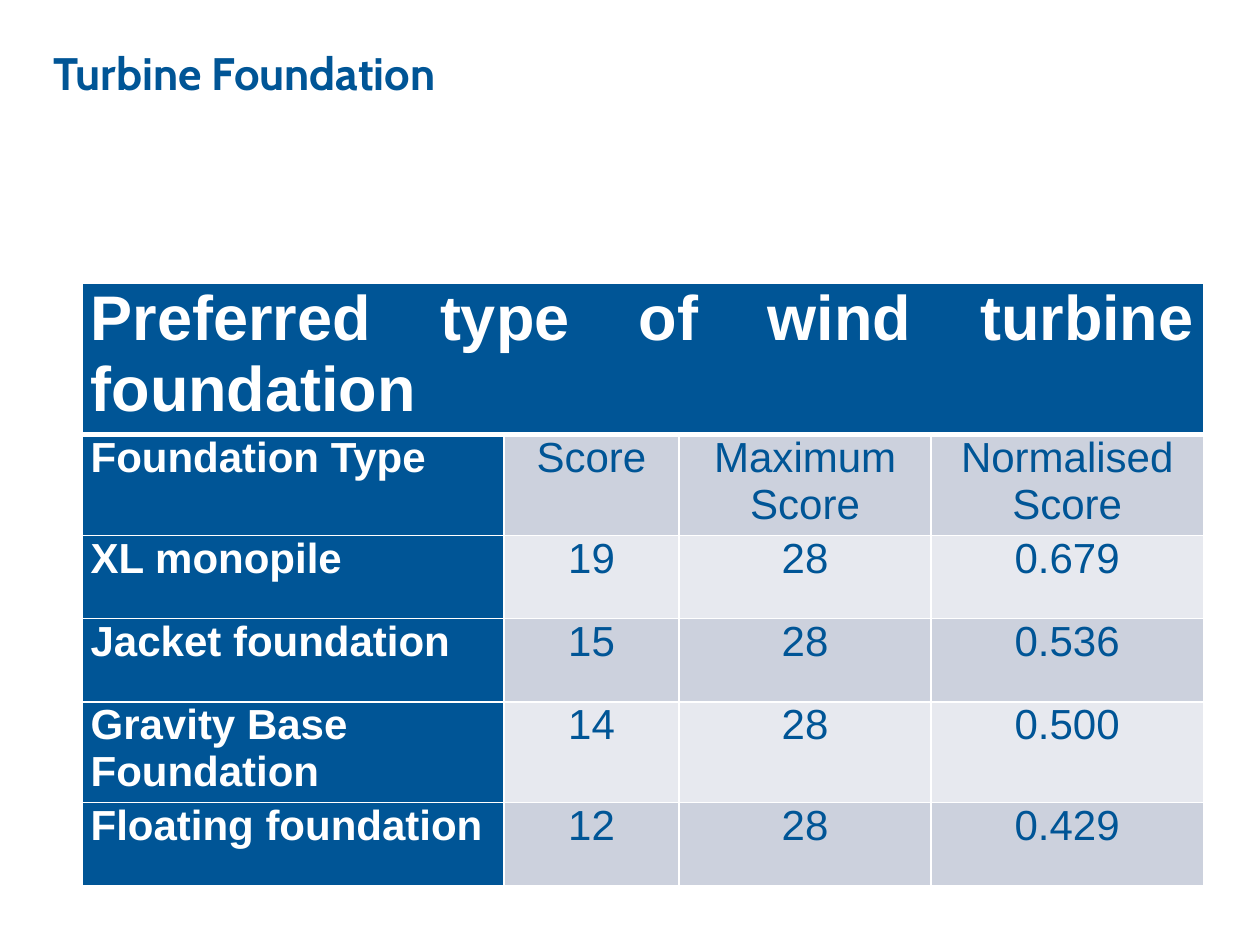
from lxml.etree import SubElement
from pptx import Presentation
from pptx.dml.color import RGBColor
from pptx.enum.text import MSO_ANCHOR, PP_ALIGN
from pptx.oxml.ns import qn
from pptx.util import Inches, Pt

BLUE, WHITE = "005596", "FFFFFF"
BANDS = ["CCD1DD", "E7E9EF"]
HEADING = "Preferred type of wind turbine foundation"
ROWS = [
    ["Foundation Type", "Score", "Maximum Score", "Normalised Score"],
    ["XL monopile", "19", "28", "0.679"],
    ["Jacket foundation", "15", "28", "0.536"],
    ["Gravity Base Foundation", "14", "28", "0.500"],
    ["Floating foundation", "12", "28", "0.429"],
]
COLUMN_WIDTHS = [3.35, 1.39, 2, 2.16]
ROW_HEIGHTS = [0.79] + [0.66] * len(ROWS)


def color(value):
    return RGBColor.from_string(value)


class SlideBuilder:
    def __init__(self, slide):
        self.slide = slide

    def set_text(self, tf, text, size, hex_color, font="Arial", bold=False, align=PP_ALIGN.LEFT):
        tf.text = text
        p = tf.paragraphs[0]
        p.alignment = align
        f = p.runs[0].font
        f.name, f.size, f.bold = font, Pt(size), bold
        f.color.rgb = color(hex_color)

    def title(self, text, left, top, width, height):
        box = self.slide.shapes.add_textbox(*map(Inches, (left, top, width, height)))
        tf = box.text_frame
        tf.word_wrap = True
        tf.vertical_anchor = MSO_ANCHOR.MIDDLE
        self.set_text(tf, text, 26, BLUE, font="Cabin", bold=True)

    def table(self, left, top, widths, heights):
        frame = self.slide.shapes.add_table(
            len(heights), len(widths),
            *map(Inches, (left, top, sum(widths), sum(heights))))
        table = frame.table
        for column, width in zip(table.columns, widths):
            column.width = Inches(width)
        for row, height in zip(table.rows, heights):
            row.height = Inches(height)
        return table

    def borders(self, cell, **widths):
        """Draw white cell borders; widths are points keyed by L, R, T and B."""
        tc_pr = cell._tc.get_or_add_tcPr()
        for side, width in widths.items():
            ln = SubElement(tc_pr, qn(f"a:ln{side}"), w=str(Pt(width)))
            fill = SubElement(ln, qn("a:solidFill"))
            SubElement(fill, qn("a:srgbClr"), val=WHITE)

    def cell(self, cell, text, fill, size, hex_color, bold, align, top=1, bottom=1):
        cell.margin_left = cell.margin_right = Inches(0.07)
        cell.margin_top = cell.margin_bottom = 0
        self.borders(cell, L=1, R=1, T=top, B=bottom)
        cell.fill.solid()
        cell.fill.fore_color.rgb = color(fill)
        self.set_text(cell.text_frame, text, size, hex_color, bold=bold, align=align)


def main():
    prs = Presentation()
    prs.slide_width, prs.slide_height = Inches(10), Inches(7.5)
    s = SlideBuilder(prs.slides.add_slide(prs.slide_layouts[6]))

    s.title("Turbine Foundation", 0.33, 0.25, 8.75, 0.65)

    table = s.table(0.65, 2.25, COLUMN_WIDTHS, ROW_HEIGHTS)
    heading = table.cell(0, 0)
    heading.merge(table.cell(0, len(COLUMN_WIDTHS) - 1))
    s.cell(heading, HEADING, BLUE, 36, WHITE, True, PP_ALIGN.JUSTIFY, bottom=3)
    for i, row in enumerate(ROWS):
        for j, text in enumerate(row):
            cell = table.cell(i + 1, j)
            top = 3 if i == 0 else 1
            if j == 0:
                s.cell(cell, text, BLUE, 24, WHITE, True, PP_ALIGN.LEFT, top)
            else:
                s.cell(cell, text, BANDS[i % 2], 24, BLUE, False, PP_ALIGN.CENTER, top)

    prs.save("out.pptx")


if __name__ == "__main__":
    main()
